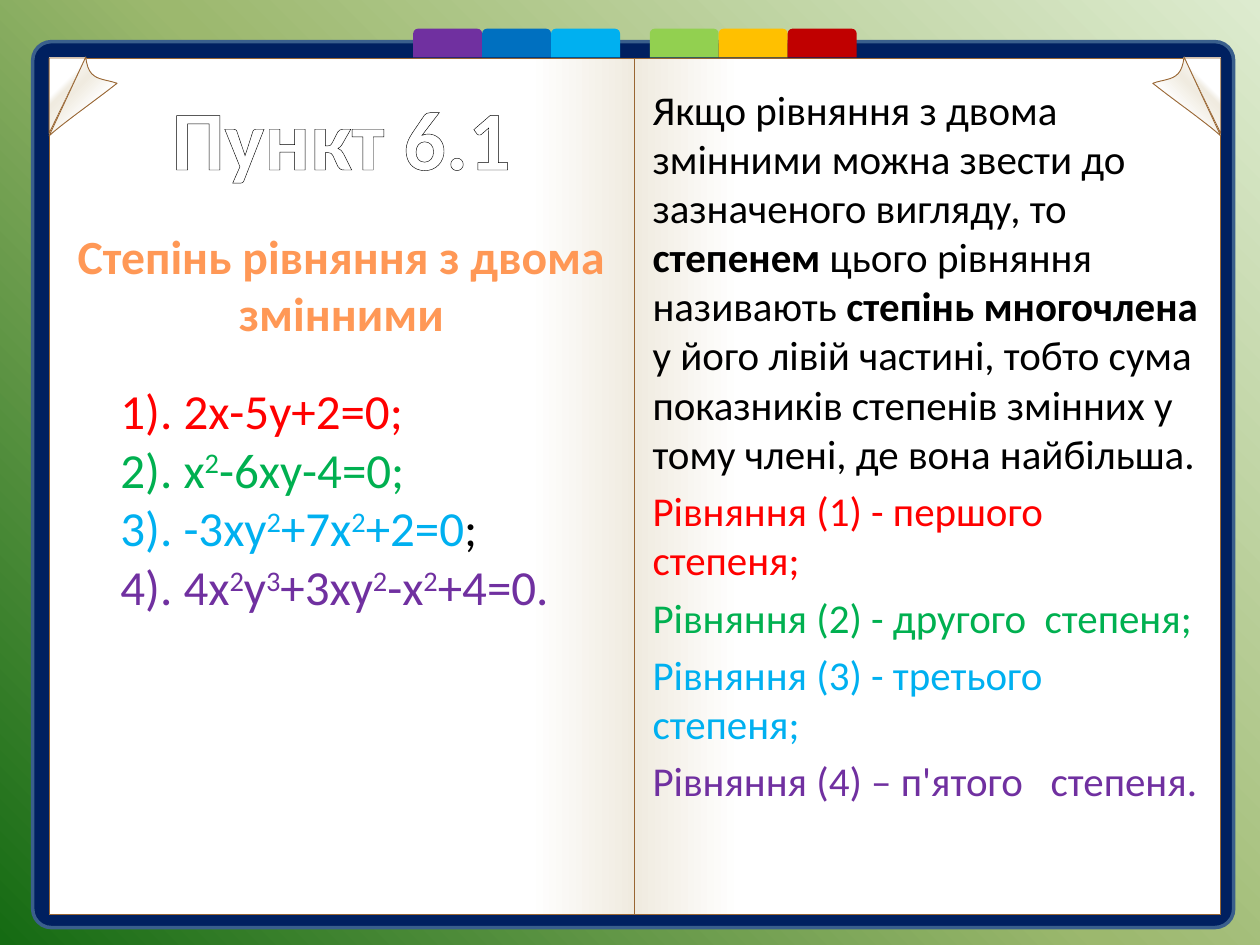
from dataclasses import dataclass

from lxml.etree import SubElement as Sub
from pptx import Presentation
from pptx.dml.color import RGBColor as RGB
from pptx.enum.shapes import MSO_SHAPE as Kind
from pptx.enum.text import MSO_ANCHOR as Anchor, MSO_AUTO_SIZE as Auto, PP_ALIGN as Align
from pptx.oxml.ns import qn
from pptx.util import Cm, Pt

HEX = {
    "black": "000000", "white": "FFFFFF", "cream": "F0EBE0", "brown": "996633",
    "navy": "002060", "steel": "3A5F8C", "red": "FF0000", "green": "00B050",
    "sky": "00B0F0", "violet": "7030A0", "blue": "0070C0", "lime": "92D050",
    "gold": "FFC000", "wine": "C00000", "peach": "FF9856",
    "pale": "DDEBCF", "moss": "9CB86E", "forest": "156B13",
}
FONT = "Calibri"
MID = 12.8  # spine of the book, cm


@dataclass
class Box:
    x: float
    y: float
    w: float
    h: float

    def cm(self) -> tuple:
        return Cm(self.x), Cm(self.y), Cm(self.w), Cm(self.h)


@dataclass
class Grad:
    stops: list
    ang: int


@dataclass
class Tab:
    x: float
    hue: str


@dataclass
class Part:
    text: str
    hue: str = "black"
    bold: bool = False


def blend(props, grad: Grad) -> None:
    """Swap the empty fill of a property element for a gradient."""
    fill = props.makeelement(qn("a:gradFill"), {"rotWithShape": "1"})
    stops = Sub(fill, qn("a:gsLst"))
    for pos, hue in grad.stops:
        stop = Sub(stops, qn("a:gs"), pos=str(pos * 1000))
        Sub(stop, qn("a:srgbClr"), val=HEX[hue])
    Sub(fill, qn("a:lin"), ang=str(grad.ang * 60000), scaled="0")
    props.replace(props.find(qn("a:noFill")), fill)


def paint(shape, fill, line: str = "", width: float = 0.5) -> None:
    shape.shadow.inherit = False
    if isinstance(fill, Grad):
        shape.fill.background()
        blend(shape._element.spPr, fill)
    else:
        shape.fill.solid()
        shape.fill.fore_color.rgb = RGB.from_string(HEX[fill])
    if line:
        shape.line.color.rgb = RGB.from_string(HEX[line])
        shape.line.width = Pt(width)
    else:
        shape.line.fill.background()


def curve(a: tuple, b: tuple, c: tuple, d: tuple, n: int = 12) -> list:
    """Points of a cubic curve from a to d, without a itself."""
    pts = []
    for t in (i / n for i in range(1, n + 1)):
        u = 1 - t
        pts.append(tuple(u**3 * p + 3 * u * u * t * q + 3 * u * t * t * r + t**3 * s
                         for p, q, r, s in zip(a, b, c, d)))
    return pts


def fold(shapes, pts: list, grad: Grad, right: bool) -> None:
    """Draw a left-hand corner part, mirrored for the right page."""
    if right:
        pts = [(2 * MID - x, y) for x, y in pts]
    pts = [(Cm(x), Cm(y)) for x, y in pts]
    path = shapes.build_freeform(*pts[0])
    path.add_line_segments(pts[1:], close=True)
    paint(path.convert_to_shape(), grad, "brown")


def style(run, size: float, hue: str, bold: bool = False) -> None:
    font = run.font
    font.name, font.size, font.bold = FONT, Pt(size), bold
    font.color.rgb = RGB.from_string(HEX[hue])


def place(shape, box: Box, anchor=Anchor.TOP):
    shape.left, shape.top, shape.width, shape.height = box.cm()
    frame = shape.text_frame
    frame.word_wrap, frame.auto_size = True, Auto.NONE
    frame.vertical_anchor = anchor
    return frame


def write(frame, lines: list, size: float, align=Align.LEFT) -> None:
    """One paragraph per line; a caret lifts the character after it."""
    for i, line in enumerate(lines):
        para = frame.add_paragraph() if i else frame.paragraphs[0]
        para.alignment = align
        props = para._p.get_or_add_pPr()
        props.set("marL", "0")
        props.set("indent", "0")
        Sub(props, qn("a:buNone"))
        for part in line:
            first, *rest = part.text.split("^")
            bits = [(first, False)]
            for bit in rest:
                bits += [(bit[0], True), (bit[1:], False)]
            for text, lift in bits:
                run = para.add_run()
                run.text = text
                style(run, size, part.hue, part.bold)
                if lift:
                    run.font._element.set("baseline", "30000")


# Text
RULE = [
    Part("Якщо рівняння з двома змінними можна звести до зазначеного вигляду, то "),
    Part("степенем", bold=True),
    Part(" цього рівняння називають "),
    Part("степінь многочлена ", bold=True),
    Part("у його лівій частині, тобто сума показників степенів змінних у тому члені, "
         "де вона найбільша."),
]
NOTES = [
    RULE,
    [Part("Рівняння (1) - першого  степеня;", "red")],
    [Part("Рівняння (2) - другого  степеня;", "green")],
    [Part("Рівняння (3) - третього  степеня;", "sky")],
    [Part("Рівняння (4) – п'ятого   степеня.", "violet")],
]
SUMS = [
    [Part("1). 2х-5у+2=0;", "red")],
    [Part("2). х^2-6ху-4=0;", "green")],
    [Part("3). -3ху^2+7х^2+2=0", "sky"), Part(";")],
    [Part("4). 4х^2у^3+3ху^2-х^2+4=0.", "violet")],
]
HEAD = [[Part("Степінь рівняння з двома змінними", "peach", True)]]

# Tabs
STEP = 1.39
TABS = [Tab(start + i * STEP, hue)
        for start, hues in ((8.33, ("violet", "blue", "sky")),
                            (13.1, ("lime", "gold", "wine")))
        for i, hue in enumerate(hues)]

# Page corners, left page
GAP = [(1.73, 1.17), (0.99, 2.69), (0.99, 1.17)]
FLAP = [(2.36, 1.68),
        *curve((2.36, 1.68), (1.88, 2.06), (1.3, 2.46), (0.99, 2.74)),
        (1.73, 1.15),
        *curve((1.73, 1.15), (1.78, 1.65), (2.06, 1.57), (2.36, 1.68))]


def main() -> None:
    deck = Presentation()
    deck.slide_width, deck.slide_height = Cm(25.4), Cm(19.05)
    slide = deck.slides.add_slide(deck.slide_layouts[3])
    shapes = slide.shapes
    title, left, right = slide.placeholders

    # Background
    slide.background.fill.background()
    blend(slide._element.find(".//" + qn("p:bgPr")),
          Grad([(0, "pale"), (50, "moss"), (100, "forest")], 135))

    # Book
    cover = shapes.add_shape(Kind.ROUNDED_RECTANGLE, *Box(0.66, 0.84, 24.21, 17.86).cm())
    cover.adjustments[0] = 0.021
    paint(cover, "navy", "steel", 2)
    for x, ang in ((0.99, 0), (MID, 180)):
        page = shapes.add_shape(Kind.RECTANGLE, *Box(x, 1.17, 11.81, 17.27).cm())
        paint(page, Grad([(0, "white"), (82, "white"), (100, "cream")], ang), "brown")
    for flip in (True, False):
        fold(shapes, GAP, Grad([(0, "white"), (57, "cream"), (65, "white")],
                               315 if flip else 225), flip)
        fold(shapes, FLAP, Grad([(12, "white"), (40, "cream"), (65, "white")],
                                135 if flip else 45), flip)
    for tab in TABS:
        mark = shapes.add_shape(Kind.ROUND_2_SAME_RECTANGLE,
                                *Box(tab.x, 0.58, STEP, 0.58).cm())
        paint(mark, tab.hue)

    # Placeholders go in front of the book
    for item in (title, right, left):
        shapes._spTree.append(item._element)

    # Title with outlined letters
    frame = place(title, Box(1.27, 1.57, 11.23, 2.36), Anchor.MIDDLE)
    frame.text = "Пункт 6.1"
    para = frame.paragraphs[0]
    para.alignment = Align.CENTER
    run = para.runs[0]
    style(run, 48, "white", True)
    props = run.font._element
    edge = props.makeelement(qn("a:ln"), {"w": str(Pt(0.75))})
    Sub(Sub(edge, qn("a:solidFill")), qn("a:srgbClr"), val=HEX["black"])
    props.insert(0, edge)

    # Lists and equations
    write(place(right, Box(12.9, 1.57, 11.71, 16.28)), NOTES, 23.4)
    write(place(left, Box(1.27, 4.45, 11.23, 13.41)), HEAD, 27.2, Align.CENTER)
    box = Box(2.18, 7.54, 9.93, 5.05)
    write(place(shapes.add_textbox(*box.cm()), box), SUMS, 28)

    deck.save("out.pptx")


if __name__ == "__main__":
    main()
